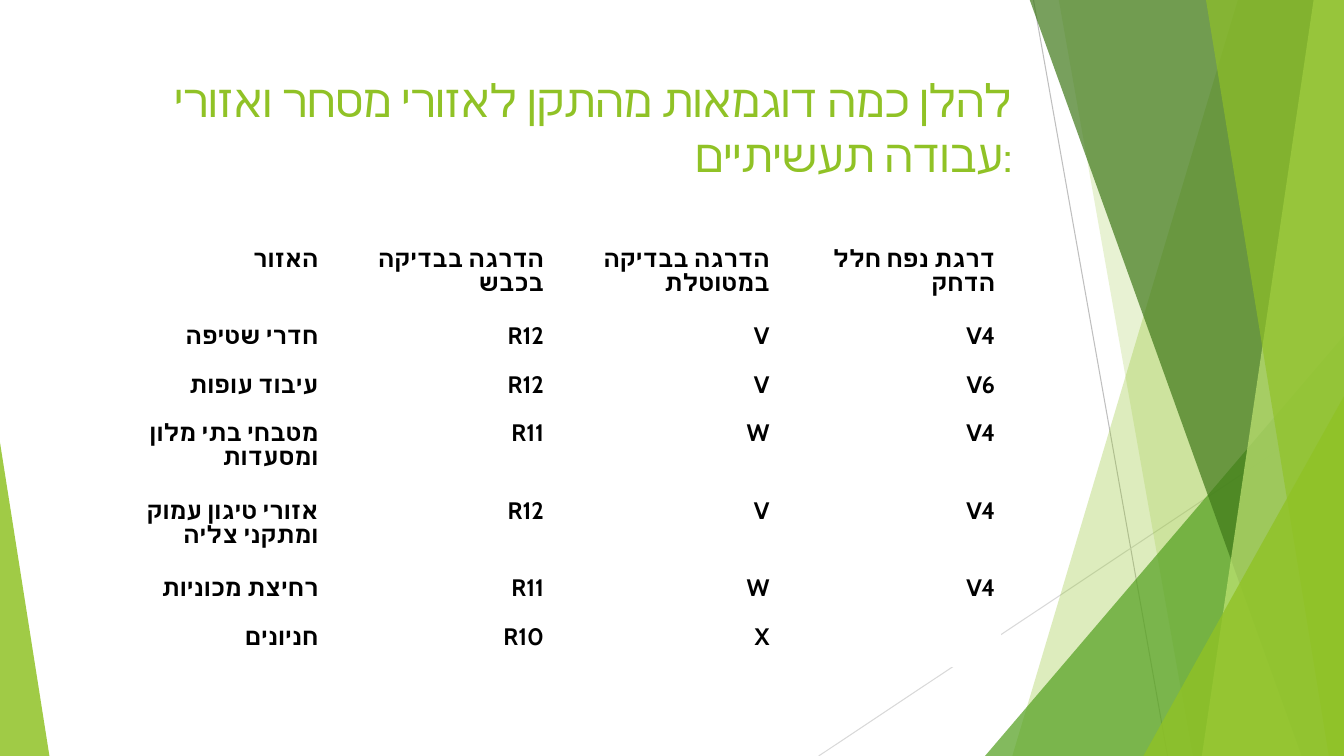
"""Build a slide with a table of slip-resistance grades for work areas."""
import pptx
import pptx.dml.color
import pptx.enum.shapes
import pptx.enum.text
import pptx.oxml.ns
import pptx.oxml.xmlchemy
import pptx.util

Inches = pptx.util.Inches
OxmlElement = pptx.oxml.xmlchemy.OxmlElement
FONT = "Cabin"
GREEN = "90C226"
WIDTH, HEIGHT, TOP = 13.33, 7.5, -0.01


def color(hex_text):
    return pptx.dml.color.RGBColor.from_string(hex_text)


def write(frame, text, size, ink, bold=False, spacing=1.0, anchor="TOP"):
    frame.word_wrap = True
    frame.vertical_anchor = pptx.enum.text.MSO_ANCHOR[anchor]
    para = frame.paragraphs[0]
    para.alignment = pptx.enum.text.PP_ALIGN.RIGHT
    para.line_spacing = spacing
    span = para.add_run()
    span.text = text
    span.font.name = FONT
    span.font.size = pptx.util.Pt(size)
    span.font.bold = bold
    span.font.color.rgb = color(ink)
    complex_font = OxmlElement("a:cs")
    complex_font.set("typeface", FONT)
    span.font._element.append(complex_font)


deck = pptx.Presentation()
deck.slide_width, deck.slide_height = Inches(WIDTH), Inches(HEIGHT)
page = deck.slides.add_slide(deck.slide_layouts[6])

rays = [
    (10.25, 0, 11.58, HEIGHT, "BFBFBF"),
    (WIDTH, 4.03, 8.12, HEIGHT, "D9D9D9"),
]
for *ends, ink in rays:
    ray = page.shapes.add_connector(
        pptx.enum.shapes.MSO_CONNECTOR.STRAIGHT, *[Inches(end) for end in ends]
    )
    ray.line.color.rgb = color(ink)
    ray.line.width = pptx.util.Pt(0.75)
    ray._element.spPr.append(OxmlElement("a:effectLst"))

facets = [
    ("band", (12.28, 10.04), GREEN, 30),
    ("band", (10.5, 11.83), GREEN, 20),
    ("triangle", (9.77, 3.33, 3.56, 1), "54A021", 72),
    ("band", (10.21, 12.91), "3F7819", 70),
    ("band", (13.03, 11.92), "C0E474", 70),
    ("band", (11.96, 13.18), GREEN, 65),
    ("triangle", (11.34, 3.93, 1.99, 1), GREEN, 80),
    ("triangle", (0, 4.39, 0.49, 0), GREEN, 85),
]
for kind, place, ink, opacity in facets:
    if kind == "band":
        upper, lower = place
        outline = page.shapes.build_freeform(Inches(upper), Inches(TOP))
        corners = [(WIDTH, TOP), (WIDTH, HEIGHT), (lower, HEIGHT)]
        outline.add_line_segments([(Inches(x), Inches(y)) for x, y in corners])
        facet = outline.convert_to_shape()
    else:
        left, top, width, apex = place
        facet = page.shapes.add_shape(
            pptx.enum.shapes.MSO_SHAPE.ISOSCELES_TRIANGLE,
            Inches(left), Inches(top), Inches(width), Inches(HEIGHT - top),
        )
        facet.adjustments[0] = apex
    facet.shadow.inherit = False
    facet.line.fill.background()
    facet.fill.solid()
    facet.fill.fore_color.rgb = color(ink)
    alpha = OxmlElement("a:alpha")
    alpha.set("val", str(opacity * 1000))
    facet._element.spPr.find(".//" + pptx.oxml.ns.qn("a:srgbClr")).append(alpha)

title = page.shapes.add_textbox(Inches(0.74), Inches(0.67), Inches(9.4), Inches(1.19))
write(
    title.text_frame,
    "להלן כמה דוגמאות מהתקן לאזורי מסחר ואזורי עבודה תעשיתיים:",
    size=32.4, ink=GREEN,
)

grades = [
    ("האזור", "הדרגה בבדיקה בכבש", "הדרגה בבדיקה במטוטלת", "דרגת נפח חלל הדחק"),
    ("חדרי שטיפה", "R12", "V", "V4"),
    ("עיבוד עופות", "R12", "V", "V6"),
    ("מטבחי בתי מלון ומסעדות", "R11", "W", "V4"),
    ("אזורי טיגון עמוק ומתקני צליה", "R12", "V", "V4"),
    ("רחיצת מכוניות", "R11", "W", "V4"),
    ("חניונים", "R10", "X", ""),
]
row_heights = [0.77, 0.48, 0.48, 0.77, 0.77, 0.48, 0.48]
table = page.shapes.add_table(
    len(grades), len(grades[0]),
    Inches(0.97), Inches(2.36), Inches(8.95), Inches(sum(row_heights)),
).table
table.first_row = table.horz_banding = False
for row, height, labels in zip(table.rows, row_heights, grades):
    row.height = Inches(height)
    for cell, label in zip(row.cells, labels):
        cell.fill.solid()
        cell.fill.fore_color.rgb = color("FFFFFF")
        cell.margin_left = cell.margin_right = Inches(0.05)
        cell.margin_top = cell.margin_bottom = Inches(0.1)
        write(
            cell.text_frame, label,
            size=17, ink="000000", bold=True, spacing=0.83, anchor="MIDDLE",
        )

deck.save("out.pptx")
